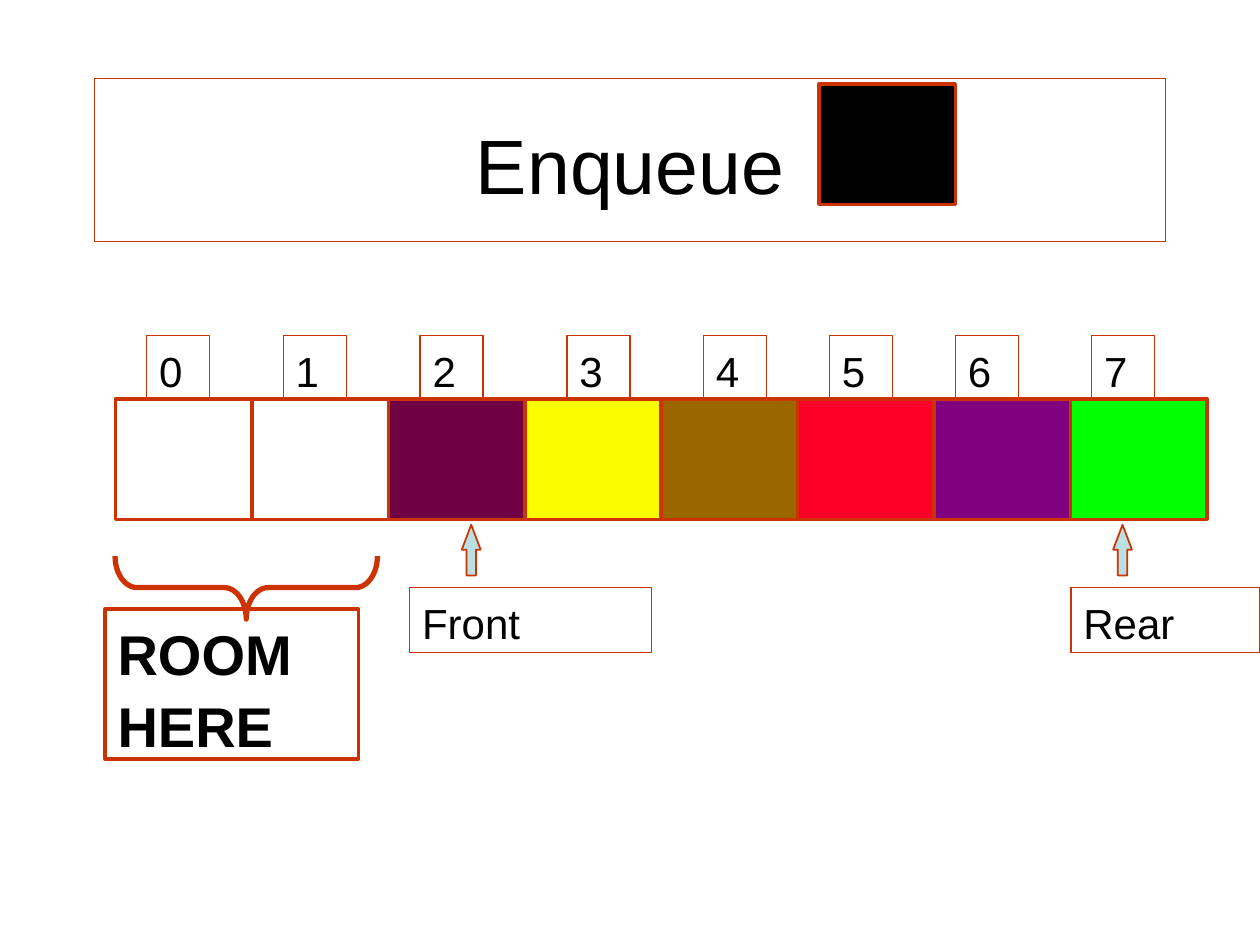
from pptx import Presentation
from pptx.dml.color import RGBColor
from pptx.enum.shapes import MSO_SHAPE
from pptx.enum.text import MSO_ANCHOR, PP_ALIGN
from pptx.util import Cm, Pt

RECT = MSO_SHAPE.RECTANGLE
UP_ARROW = MSO_SHAPE.UP_ARROW
LEFT_BRACE = MSO_SHAPE.LEFT_BRACE
TOP, MIDDLE = MSO_ANCHOR.TOP, MSO_ANCHOR.MIDDLE
LEFT, CENTER = PP_ALIGN.LEFT, PP_ALIGN.CENTER

COLORS = {
    "line": "CC3300", "text": "000000", "arrow": "BBE0E3", "new": "000000",
    "plum": "6E0043", "yellow": "FAFD00", "brown": "996600",
    "red": "FC0128", "purple": "800080", "green": "00FF00",
}
CELL_W, CELL_H = 2.75, 2.43
QUEUE_X, QUEUE_Y = 2.33, 8.04
QUEUE = [None, None, "plum", "yellow", "brown", "red", "purple", "green"]
INDEX_X = [2.96, 5.71, 8.47, 11.43, 14.18, 16.72, 19.26, 22.01]


class Deck:
    """Holds the style and the slide being drawn."""

    def __init__(self, prs):
        self.slide = prs.slides.add_slide(prs.slide_layouts[6])
        self.font = "Arial"

    def shape(self, kind, x, y, w, h, fill=None, weight=0.75):
        s = self.slide.shapes.add_shape(kind, Cm(x), Cm(y), Cm(w), Cm(h))
        s.shadow.inherit = False
        if fill:
            s.fill.solid()
            s.fill.fore_color.rgb = RGBColor.from_string(COLORS[fill])
        else:
            s.fill.background()
        s.line.color.rgb = RGBColor.from_string(COLORS["line"])
        s.line.width = Pt(weight)
        return s

    def cell(self, x, y, fill):
        return self.shape(RECT, x, y, CELL_W, CELL_H, fill, 2)

    def label(self, text, x, y, w, h, size=24, bold=False, weight=0.75,
              align=LEFT, anchor=TOP):
        s = self.shape(RECT, x, y, w, h, weight=weight)
        tf = s.text_frame
        tf.word_wrap = True
        tf.vertical_anchor = anchor
        p = tf.paragraphs[0]
        p.alignment = align
        p.line_spacing = 1.07
        r = p.add_run()
        r.text = text
        for name, value in {"name": self.font, "size": Pt(size), "bold": bold}.items():
            setattr(r.font, name, value)
        r.font.color.rgb = RGBColor.from_string(COLORS["text"])
        return s

    def pointer(self, text, arrow_x, x, w):
        s = self.shape(UP_ARROW, arrow_x, 10.58, 0.38, 1.02, "arrow", 1)
        s.adjustments[0], s.adjustments[1] = 0.5, 1.32
        self.label(text, x, 11.85, w, 1.3)

    def brace(self, x, y, w, h):
        s = self.shape(LEFT_BRACE, x, y, w, h, weight=3)
        s.adjustments[0], s.adjustments[1] = 0.35, 0.5
        s.rotation = 270


def main():
    prs = Presentation()
    prs.slide_width, prs.slide_height = Cm(25.4), Cm(19.05)
    deck = Deck(prs)

    # Title and the element being added
    deck.label("Enqueue", 1.91, 1.59, 21.59, 3.28, size=44,
               align=CENTER, anchor=MIDDLE)
    deck.cell(16.51, 1.69, "new")

    # Front and rear pointers
    deck.pointer("Front", 9.31, 8.26, 4.87)
    deck.pointer("Rear", 22.44, 21.59, 3.81)

    # Queue cells with their indices
    for i, fill in enumerate(QUEUE):
        deck.cell(QUEUE_X + i * CELL_W, QUEUE_Y, fill)
    for i, x in enumerate(INDEX_X):
        deck.label(str(i), x, 6.77, 1.27, 1.3)

    # Free room at the start
    deck.label("ROOM HERE", 2.12, 12.28, 5.11, 3.02, size=32, bold=True, weight=2)
    deck.brace(4.33, 9.2, 1.27, 5.29)

    prs.save("out.pptx")


if __name__ == "__main__":
    main()
